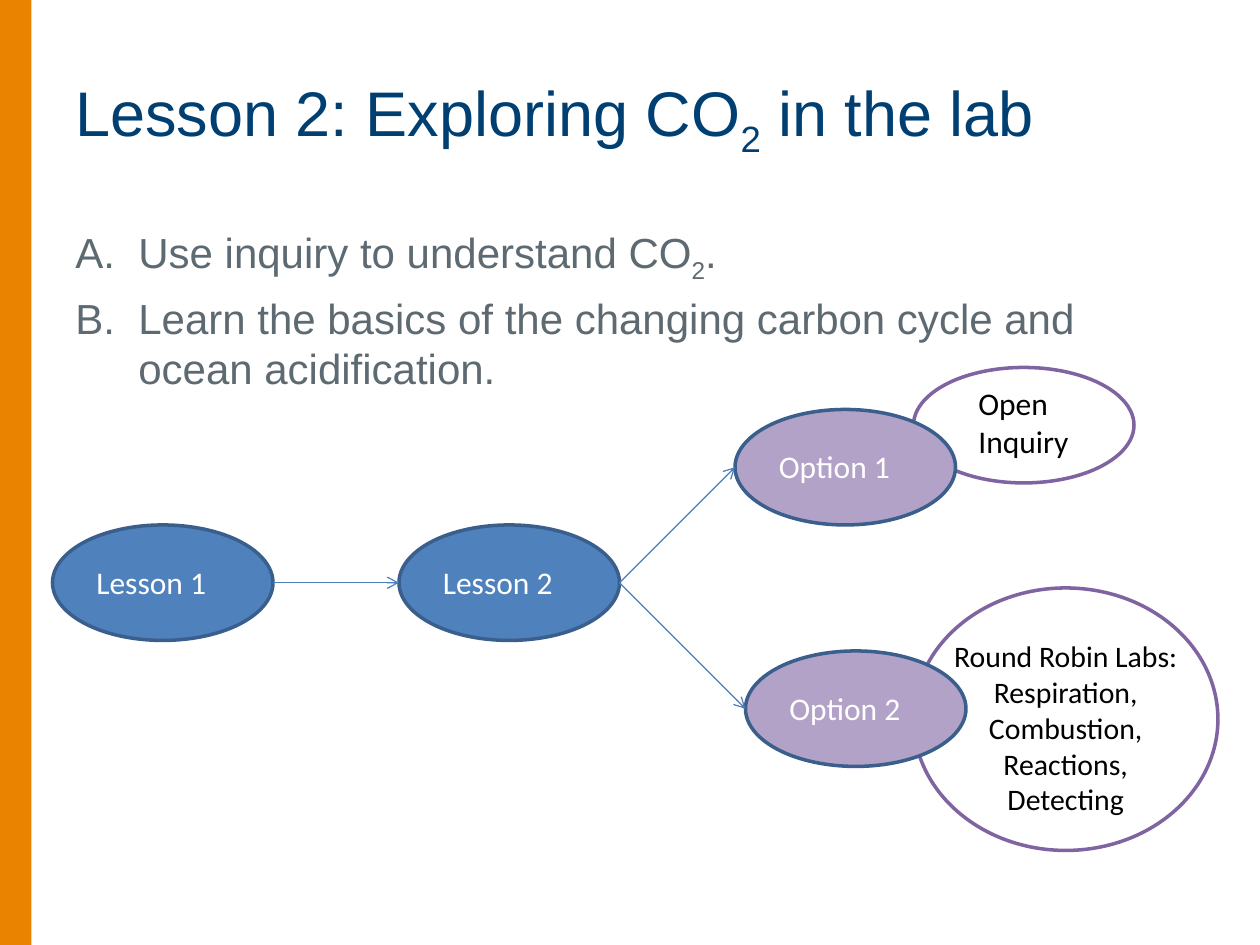
"""Build the Lesson 2 slide with its lesson flow diagram on a 120 by 90 grid."""
from lxml import etree
from pptx import Presentation
from pptx.dml.color import RGBColor
from pptx.enum.shapes import MSO_CONNECTOR, MSO_SHAPE
from pptx.enum.text import MSO_ANCHOR, PP_ALIGN
from pptx.oxml.ns import qn
from pptx.util import Inches, Pt

OVAL, RECTANGLE = MSO_SHAPE.OVAL, MSO_SHAPE.RECTANGLE
STRAIGHT = MSO_CONNECTOR.STRAIGHT
TOP, MIDDLE = MSO_ANCHOR.TOP, MSO_ANCHOR.MIDDLE
LEFT, CENTER = PP_ALIGN.LEFT, PP_ALIGN.CENTER

COLORS = {
    "band": "E98300", "title": "003F72", "body": "5E6A71",
    "lesson": "4F81BD", "option": "B3A2C7", "edge": "3A5F8C",
    "detail": "8064A2", "arrow": "4B7EBC", "white": "FFFFFF", "black": "000000",
}
UNIT = Inches(10) / 120
NODE_WIDTH, NODE_HEIGHT = 21, 11


def add_block(kind, cells, fill, edge=None):
    block = slide.shapes.add_shape(kind, *[round(cell * UNIT) for cell in cells])
    block.shadow.inherit = False
    block.fill.solid()
    block.fill.fore_color.rgb = RGBColor.from_string(COLORS[fill])
    if edge:
        block.line.color.rgb = RGBColor.from_string(COLORS[edge])
        block.line.width = Pt(2)
    else:
        block.line.fill.background()


def add_text(cells, paragraphs, font, size, color, align=LEFT, anchor=TOP):
    frame = slide.shapes.add_textbox(*[round(cell * UNIT) for cell in cells]).text_frame
    frame.word_wrap = True
    frame.vertical_anchor = anchor
    for index, pieces in enumerate(paragraphs):
        paragraph = frame.add_paragraph() if index else frame.paragraphs[0]
        paragraph.alignment = align
        for position, piece in enumerate(pieces):
            run = paragraph.add_run()
            run.text = piece
            run.font.name = font
            run.font.size = Pt(size)
            run.font.color.rgb = RGBColor.from_string(COLORS[color])
            if position == 1:
                run._r.get_or_add_rPr().set("baseline", "-25000")
    return frame


prs = Presentation()
prs.slide_width, prs.slide_height = Inches(10), Inches(7.5)
slide = prs.slides.add_slide(prs.slide_layouts[6])

add_block(RECTANGLE, (0, 0, 3, 90), "band")
add_block(OVAL, (87, 56, 29, 25), "white", "detail")
add_text((89, 60.2, 25, 21.8),
         [["Round Robin Labs:"], ["Respiration, Combustion, Reactions, Detecting"]],
         "Calibri", 17, "black", align=CENTER)
add_block(OVAL, (87, 35, NODE_WIDTH, NODE_HEIGHT), "white", "detail")

add_text((6, 3.6, 108, 15), [["Lesson 2: Exploring CO", "2", " in the lab"]],
         "Arial", 36, "title", anchor=MIDDLE)
goals = add_text(
    (6, 21, 108, 16.7),
    [["Use inquiry to understand CO", "2", "."],
     ["Learn the basics of the changing carbon cycle and ocean acidification."]],
    "Arial", 24, "body")
for goal in goals.paragraphs:
    properties = goal._p.get_or_add_pPr()
    properties.set("marL", str(Inches(0.5)))
    properties.set("indent", str(-Inches(0.5)))
    etree.SubElement(properties, qn("a:buFont")).set("typeface", "Arial")
    etree.SubElement(properties, qn("a:buAutoNum")).set("type", "alphaUcPeriod")
goals.paragraphs[1].space_before = Pt(4.8)

nodes = {
    "Lesson 1": (5, 50, "lesson"),
    "Lesson 2": (38, 50, "lesson"),
    "Option 1": (70, 39, "option"),
    "Option 2": (71, 62, "option"),
}
for label, (column, row, fill) in nodes.items():
    add_block(OVAL, (column, row, NODE_WIDTH, NODE_HEIGHT), fill, "edge")
    add_text((column + 3, row + 3, 15, 4.8), [[label]], "Calibri", 18, "white")

for source, target in [("Lesson 1", "Lesson 2"), ("Lesson 2", "Option 2"),
                       ("Lesson 2", "Option 1")]:
    start_column, start_row, _ = nodes[source]
    end_column, end_row, _ = nodes[target]
    ends = (start_column + NODE_WIDTH, start_row + NODE_HEIGHT / 2,
            end_column, end_row + NODE_HEIGHT / 2)
    arrow = slide.shapes.add_connector(STRAIGHT, *[round(end * UNIT) for end in ends])
    arrow.line.color.rgb = RGBColor.from_string(COLORS["arrow"])
    arrow.line.width = Pt(0.75)
    etree.SubElement(arrow.line._get_or_add_ln(), qn("a:tailEnd")).set("type", "arrow")
    etree.SubElement(arrow._element.spPr, qn("a:effectLst"))

add_text((92, 36, 14, 8.5), [["Open Inquiry"]], "Calibri", 18, "black")

prs.save("out.pptx")
